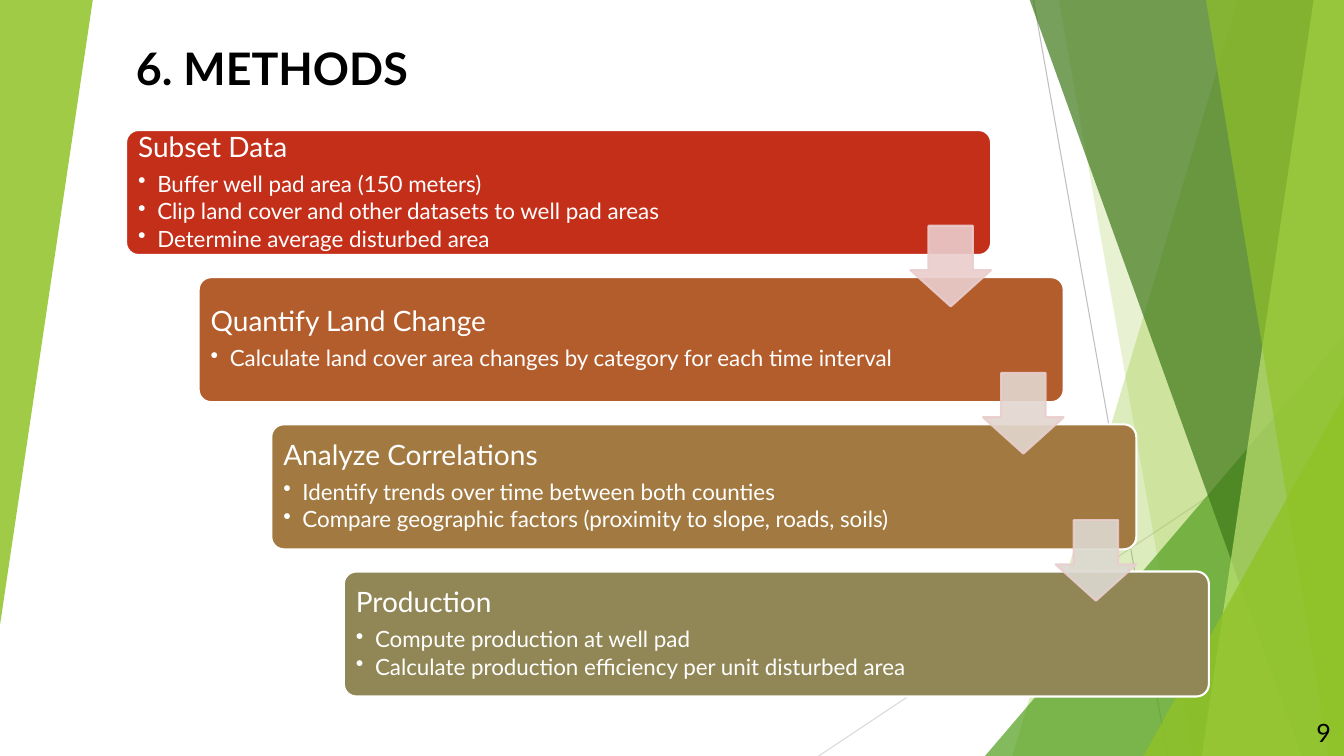
from dataclasses import dataclass

from lxml.etree import SubElement
from pptx import Presentation
from pptx.dml.color import RGBColor
from pptx.enum.shapes import MSO_CONNECTOR, MSO_SHAPE
from pptx.enum.text import MSO_ANCHOR, PP_ALIGN
from pptx.oxml.ns import qn
from pptx.util import Inches, Pt


@dataclass(frozen=True)
class Theme:
    font: str = "Lato"
    ink: str = "000000"
    white: str = "FFFFFF"
    lime: str = "90C226"
    pale_lime: str = "C0E474"
    green: str = "54A021"
    dark_green: str = "3F7819"
    arrow_line: str = "EACDCD"
    title_size: int = 32
    number_size: int = 18
    heading_size: int = 20
    bullet_size: int = 16


THEME = Theme()
WIDTH, HEIGHT = 13.33, 7.5
FACET_TOP = -0.01
STEP_X, STEP_Y = 0.72, 1.46

# Heading, card colour, colour of the arrow to the next card, bullets
STEPS = [
    ("Subset Data", "C42F1A", "EACDCD",
     ["Buffer well pad area (150 meters)",
      "Clip land cover and other datasets to well pad areas",
      "Determine average disturbed area"]),
    ("Quantify Land Change", "B35D2D", "E3D7CF",
     ["Calculate land cover area changes by category for each time interval"]),
    ("Analyze Correlations", "A27A41", "DCD9D1",
     ["Identify trends over time between both counties",
      "Compare geographic factors (proximity to slope, roads, soils)"]),
    ("Production", "918655", None,
     ["Compute production at well pad",
      "Calculate production efficiency per unit disturbed area"]),
]


def set_values(target, values):
    for name, value in values.items():
        setattr(target, name, value)


def paint(shape, fill, line=None, opacity=100):
    """Set fill, outline and the opacity of both; without a line colour there is no outline."""
    shape.shadow.inherit = False
    shape.fill.solid()
    shape.fill.fore_color.rgb = RGBColor.from_string(fill)
    if line:
        shape.line.color.rgb = RGBColor.from_string(line)
        shape.line.width = Pt(1.5)
    else:
        shape.line.fill.background()
    if opacity < 100:
        for color in shape._element.spPr.iter(qn("a:srgbClr")):
            SubElement(color, qn("a:alpha"), val=str(opacity * 1000))


def add_preset(slide, kind, box, adjustments):
    shape = slide.shapes.add_shape(kind, *map(Inches, box))
    for index, value in enumerate(adjustments):
        shape.adjustments[index] = value
    return shape


def add_hairline(slide, start, end, color):
    line = slide.shapes.add_connector(MSO_CONNECTOR.STRAIGHT, *map(Inches, start + end))
    line.line.color.rgb = RGBColor.from_string(color)
    line.line.width = Pt(0.75)
    SubElement(line._element.spPr, qn("a:effectLst"))


def add_facet(slide, top_x, bottom_x, color, opacity):
    """Add a band from a slanted left edge to the right edge of the slide."""
    corners = [(top_x, FACET_TOP), (WIDTH, FACET_TOP), (WIDTH, HEIGHT), (bottom_x, HEIGHT)]
    points = [(Inches(x), Inches(y)) for x, y in corners]
    builder = slide.shapes.build_freeform(*points[0])
    builder.add_line_segments(points[1:], close=True)
    paint(builder.convert_to_shape(), color, opacity=opacity)


def add_corner(slide, box, color, opacity, rotation=0):
    corner = add_preset(slide, MSO_SHAPE.ISOSCELES_TRIANGLE, box, [1])
    corner.rotation = rotation
    paint(corner, color, opacity=opacity)


def add_background(slide):
    add_hairline(slide, (10.25, 0), (11.58, HEIGHT), "BFBFBF")
    add_hairline(slide, (WIDTH, 4.03), (8.12, HEIGHT), "D9D9D9")
    add_facet(slide, 12.28, 10.04, THEME.lime, 30)
    add_facet(slide, 10.5, 11.83, THEME.lime, 20)
    add_corner(slide, (9.77, 3.33, 3.56, 4.17), THEME.green, 72)
    add_facet(slide, 10.21, 12.91, THEME.dark_green, 70)
    add_facet(slide, 13.03, 11.92, THEME.pale_lime, 70)
    add_facet(slide, 11.96, 13.18, THEME.lime, 65)
    add_corner(slide, (11.34, 3.93, 1.99, 3.57), THEME.lime, 80)
    add_corner(slide, (0, 0, 0.92, 6.2), THEME.lime, 85, rotation=180)


def add_text_box(slide, box):
    frame = slide.shapes.add_textbox(*map(Inches, box)).text_frame
    frame.word_wrap = True
    return frame


def write(paragraph, text, size, color, bold=False):
    run = paragraph.add_run()
    run.text = text
    set_values(run.font, {"name": THEME.font, "size": Pt(size), "bold": bold})
    run.font.color.rgb = RGBColor.from_string(color)


def make_bullet(paragraph):
    paragraph.level = 1
    properties = paragraph._p.get_or_add_pPr()
    indent = Inches(0.19)
    properties.set("marL", str(indent))
    properties.set("indent", str(-indent))
    SubElement(properties, qn("a:buChar"), char="•")


def add_card(slide, left, top, color, heading, bullets):
    card = add_preset(slide, MSO_SHAPE.ROUNDED_RECTANGLE, (left, top, 8.58, 1.24), [0.1])
    paint(card, color, THEME.white)
    frame = add_text_box(slide, (left + 0.04, top + 0.04, 7, 1.16))
    frame.vertical_anchor = MSO_ANCHOR.MIDDLE
    sides = ("left", "top", "right", "bottom")
    set_values(frame, {f"margin_{side}": Inches(0.08) for side in sides})

    paragraph = frame.paragraphs[0]
    set_values(paragraph, {"line_spacing": 0.9, "space_after": Pt(0.35 * THEME.heading_size)})
    write(paragraph, heading, THEME.heading_size, THEME.white)
    for bullet in bullets:
        paragraph = frame.add_paragraph()
        set_values(paragraph, {"line_spacing": 0.9, "space_after": Pt(0.15 * THEME.bullet_size)})
        make_bullet(paragraph)
        write(paragraph, bullet, THEME.bullet_size, THEME.white)


def add_arrow(slide, left, top, color):
    arrow = add_preset(slide, MSO_SHAPE.DOWN_ARROW, (left, top, 0.8, 0.8), [0.55, 0.45])
    paint(arrow, color, THEME.arrow_line, opacity=90)


def main():
    presentation = Presentation()
    set_values(presentation, {"slide_width": Inches(WIDTH), "slide_height": Inches(HEIGHT)})
    slide = presentation.slides.add_slide(presentation.slide_layouts[6])

    add_background(slide)
    title = add_text_box(slide, (1.25, 0.36, 8.94, 0.64)).paragraphs[0]
    write(title, "6. METHODS", THEME.title_size, THEME.ink, bold=True)
    number = add_text_box(slide, (12.66, 7.07, 0.64, 0.4)).paragraphs[0]
    number.alignment = PP_ALIGN.RIGHT
    write(number, "9", THEME.number_size, THEME.ink)

    for index, (heading, color, _, bullets) in enumerate(STEPS):
        add_card(slide, 1.25 + index * STEP_X, 1.29 + index * STEP_Y, color, heading, bullets)
    for index, (_, _, arrow_color, _) in enumerate(STEPS[:-1]):
        add_arrow(slide, 9.03 + index * STEP_X, 2.24 + index * STEP_Y, arrow_color)

    presentation.save("out.pptx")


if __name__ == "__main__":
    main()
